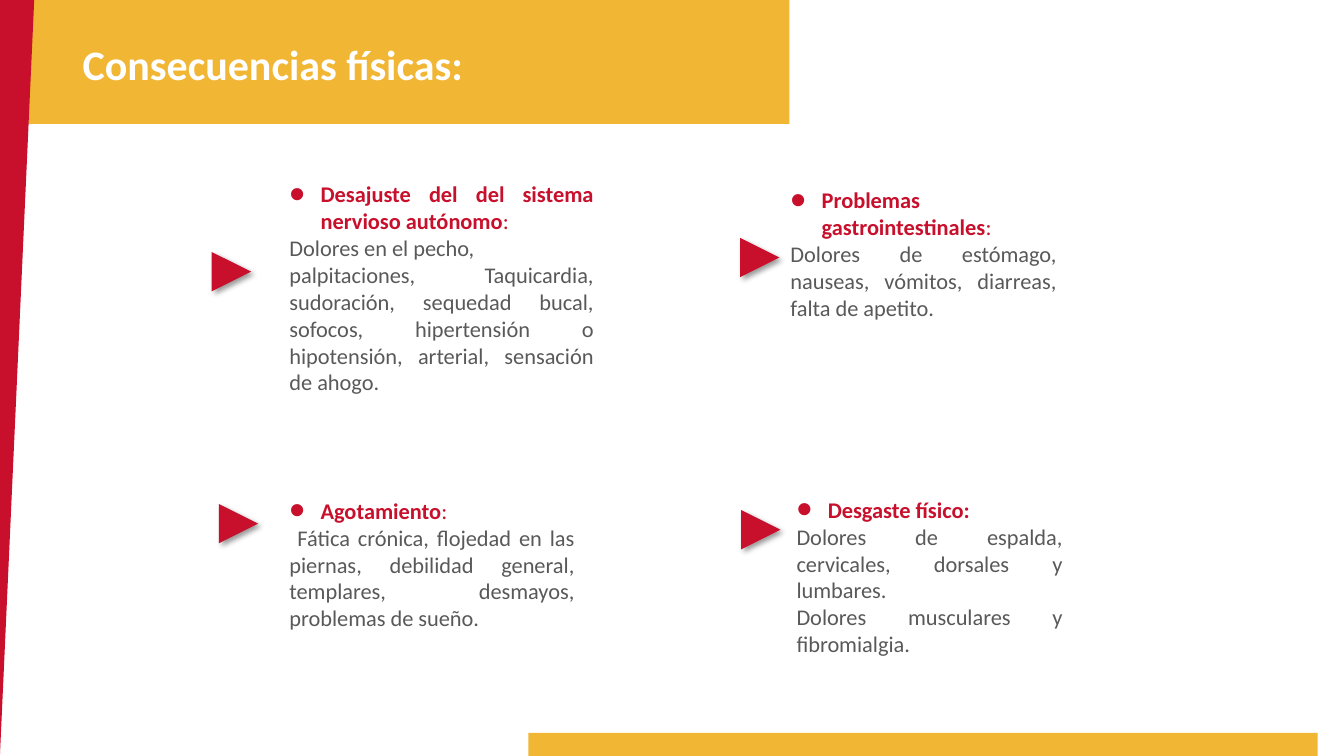
from lxml.etree import SubElement
from pptx import Presentation
from pptx.dml.color import RGBColor
from pptx.enum.shapes import MSO_SHAPE as Kind
from pptx.enum.text import MSO_ANCHOR as Anchor, MSO_AUTO_SIZE as Fit, PP_ALIGN as Align
from pptx.oxml.ns import qn
from pptx.util import Inches, Pt

RED, GOLD, GRAY, WHITE = "C8102C", "F1B633", "595959", "FFFFFF"

TOPICS = [
    ((2.77, 1.74, 3.22, 2.79), (2.1, 2.5), "Desajuste del del sistema nervioso autónomo", False,
     ["Dolores en el pecho,",
      "palpitaciones, Taquicardia, sudoración, sequedad bucal, sofocos, "
      "hipertensión o hipotensión, arterial, sensación de ahogo."], 0),
    ((7.74, 1.8, 2.84, 1.99), (7.34, 2.36), "Problemas gastrointestinales", False,
     ["Dolores de estómago, nauseas, vómitos, diarreas, falta de apetito."], 0),
    ((2.77, 4.88, 3.03, 1.45), (2.17, 5), "Agotamiento", False,
     ["Fática crónica, flojedad en las piernas, debilidad general, "
      "templares, desmayos, problemas de sueño."], 0.08),
    ((7.8, 4.87, 2.84, 1.72), (7.35, 5.06), "Desgaste físico", True,
     ["Dolores de espalda, cervicales, dorsales y lumbares.",
      "Dolores musculares y fibromialgia."], 0),
]


def color(code):
    """Turn a hex string into a colour."""
    return RGBColor.from_string(code)


def place(shape, box):
    """Move and size a shape, in inches."""
    shape.left, shape.top, shape.width, shape.height = map(Inches, box)


def write(para, text, size=16, fill=GRAY, bold=False):
    """Add a formatted run to a paragraph."""
    run = para.add_run()
    run.text = text
    font = run.font
    font.name, font.size, font.bold = "Calibri", Pt(size), bold
    font.color.rgb = color(fill)


def setup(holder, box):
    """Place a placeholder and return its text frame."""
    place(holder, box)
    frame = holder.text_frame
    frame.word_wrap = True
    frame.auto_size = Fit.NONE
    frame.vertical_anchor = Anchor.TOP
    return frame


def style(para, left=0, first=0, bullet=False):
    """Set justification, indents and bullet of a paragraph."""
    para.alignment = Align.JUSTIFY
    para.space_before = Pt(0)
    props = para._p.get_or_add_pPr()
    props.set("marL", str(Inches(left)))
    props.set("indent", str(Inches(first)))
    if bullet:
        SubElement(props, qn("a:buSzPct"), val="200000")
        SubElement(props, qn("a:buFont"), typeface="Arial")
        SubElement(props, qn("a:buChar"), char="•")
    else:
        SubElement(props, qn("a:buNone"))


def draw(slide, kind, box, fill, turn=0):
    """Add a plain filled shape."""
    shape = slide.shapes.add_shape(kind, *map(Inches, box))
    shape.rotation = turn
    shape.fill.solid()
    shape.fill.fore_color.rgb = color(fill)
    shape.line.fill.background()
    shape.shadow.inherit = False
    return shape


def frame_page(slide):
    """Draw the bands and the red wedge behind the text."""
    top = draw(slide, Kind.RECTANGLE, (0, 0, 7.83, 1.23), GOLD)
    wedge = draw(slide, Kind.ISOSCELES_TRIANGLE, (0, -0.02, 0.34, 7.5), RED, 180)
    wedge.adjustments[0] = 1
    base = draw(slide, Kind.RECTANGLE, (5.24, 7.27, 7.83, 0.23), GOLD)
    for shape in (top, wedge, base):
        slide.shapes.title._element.addprevious(shape._element)


def marker(slide, left, top):
    """Draw a red arrow marker with a soft shadow."""
    shape = draw(slide, Kind.ISOSCELES_TRIANGLE, (left, top, 0.39, 0.39), RED, 90)
    effects = shape._element.spPr.find(qn("a:effectLst"))
    shade = SubElement(effects, qn("a:outerShdw"), blurRad=str(Pt(4)), dist=str(Pt(3)),
                       dir="2700000", algn="tl", rotWithShape="0")
    tint = SubElement(shade, qn("a:srgbClr"), val="000000")
    SubElement(tint, qn("a:alpha"), val="40000")


def topic(holder, box, head, strong, lines, first):
    """Fill a placeholder with a bulleted heading and its lines."""
    frame = setup(holder, box)
    para = frame.paragraphs[0]
    style(para, 0.31, -0.31, True)
    write(para, head, fill=RED, bold=True)
    write(para, ":", fill=RED, bold=strong)
    for line in lines:
        para = frame.add_paragraph()
        style(para, first=first)
        write(para, line)


def main():
    """Build the slide and save it."""
    deck = Presentation()
    deck.slide_width, deck.slide_height = Inches(13.33), Inches(7.5)
    slide = deck.slides.add_slide(deck.slide_layouts.get_by_name("Comparison"))
    title, *bodies = slide.placeholders
    frame_page(slide)
    para = setup(title, (0.72, 0.33, 6.51, 0.61)).paragraphs[0]
    para.alignment = Align.LEFT
    write(para, "Consecuencias físicas:", size=30, fill=WHITE, bold=True)
    for body, (box, spot, *words) in zip(bodies, TOPICS):
        topic(body, box, *words)
        marker(slide, *spot)
    deck.save("out.pptx")


if __name__ == "__main__":
    main()
